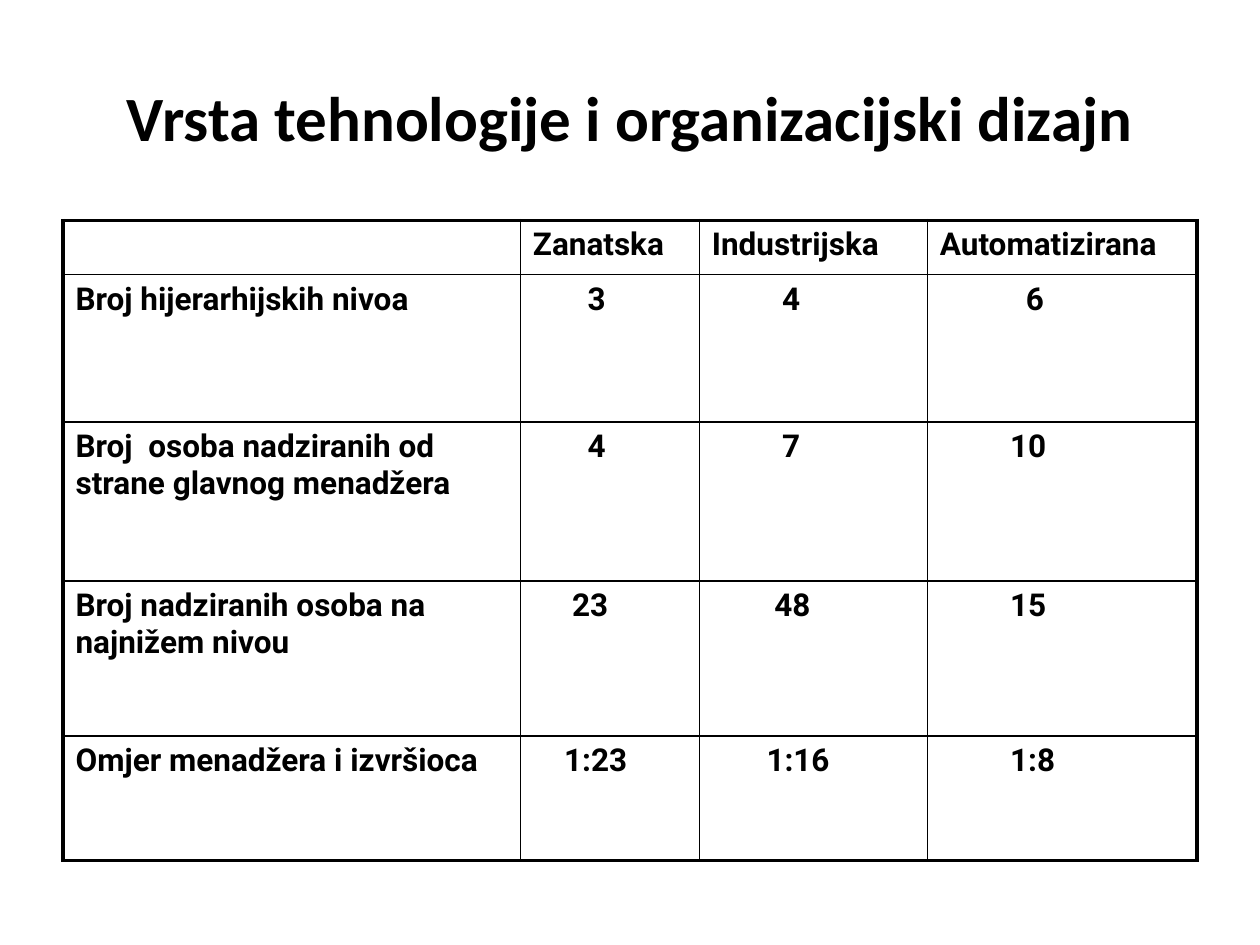
from lxml import etree
from pptx import Presentation, util as u
from pptx.dml.color import RGBColor
from pptx.enum import text
from pptx.oxml.ns import qn

COLORS = {"ink": "000000", "paper": "FFFFFF"}
TITLE_FONT = {"name": "Calibri", "size": u.Pt(36), "bold": True}
CELL_FONT = {"name": "Roboto", "size": u.Pt(18), "bold": True}
THIN, THICK = u.Pt(1), u.Pt(2.25)
MARGIN, INDENT_STEP = 0.1, 0.062  # inches

column_widths = [3.63, 1.42, 1.81, 2.14]
row_heights = [0.43, 1.17, 1.26, 1.23, 0.99]
rows = [
    ["", "Zanatska", "Industrijska", "Automatizirana"],
    ["Broj hijerarhijskih nivoa", "3", "4", "6"],
    ["Broj  osoba nadziranih od strane glavnog menadžera", "4", "7", "10"],
    ["Broj nadziranih osoba na najnižem nivou", "23", "48", "15"],
    ["Omjer menadžera i izvršioca", "1:23", "1:16", "1:8"],
]
# Indent of each cell, in steps
indents = [
    [0, 0, 0, 0],
    [0, 7, 9, 11],
    [0, 7, 9, 9],
    [0, 5, 8, 9],
    [0, 4, 7, 9],
]


def format_font(font, values):
    for name, value in values.items():
        setattr(font, name, value)
    font.color.rgb = RGBColor.from_string(COLORS["ink"])


def add_border(cell, side, width):
    properties = cell._tc.get_or_add_tcPr()
    line = etree.Element(qn(f"a:ln{side}"), w=str(int(width)))
    fill = etree.SubElement(line, qn("a:solidFill"))
    etree.SubElement(fill, qn("a:srgbClr"), val=COLORS["ink"])
    # Borders come before the cell fill
    properties.insert(len(properties.findall("*")) - 1, line)


presentation = Presentation()
presentation.slide_width, presentation.slide_height = u.Inches(10), u.Inches(7.5)
width, height = presentation.slide_width, presentation.slide_height
slide = presentation.slides.add_slide(presentation.slide_layouts[5])

# Title
title = slide.shapes.title
title.left, title.top = int(width * 0.05), int(height * 0.04)
title.width, title.height = int(width * 0.9), u.Inches(1.25)
title.text_frame.text = "Vrsta tehnologije i organizacijski dizajn"
title.text_frame.vertical_anchor = text.MSO_ANCHOR.MIDDLE
paragraph = title.text_frame.paragraphs[0]
paragraph.alignment = text.PP_ALIGN.CENTER
format_font(paragraph.runs[0].font, TITLE_FONT)

# Table grid
table = slide.shapes.add_table(
    len(rows), len(column_widths), int(width * 0.05), u.Inches(1.75),
    u.Inches(sum(column_widths)), u.Inches(sum(row_heights))).table
table.first_row = table.horz_banding = False
for column, size in zip(table.columns, column_widths):
    column.width = u.Inches(size)
for row, size in zip(table.rows, row_heights):
    row.height = u.Inches(size)

# Cells: thick outer frame, thin inner lines
last_row, last_column = len(rows) - 1, len(column_widths) - 1
for r, words in enumerate(rows):
    for c, word in enumerate(words):
        cell = table.cell(r, c)
        cell.margin_left = u.Inches(MARGIN + indents[r][c] * INDENT_STEP)
        cell.fill.solid()
        cell.fill.fore_color.rgb = RGBColor.from_string(COLORS["paper"])
        paragraph = cell.text_frame.paragraphs[0]
        if word:
            paragraph.text = word
        format_font(paragraph.runs[0].font if word else paragraph.font, CELL_FONT)
        outer = {"L": c == 0, "R": c == last_column, "T": r == 0, "B": r == last_row}
        for side, is_outer in outer.items():
            add_border(cell, side, THICK if is_outer else THIN)

presentation.save("out.pptx")
